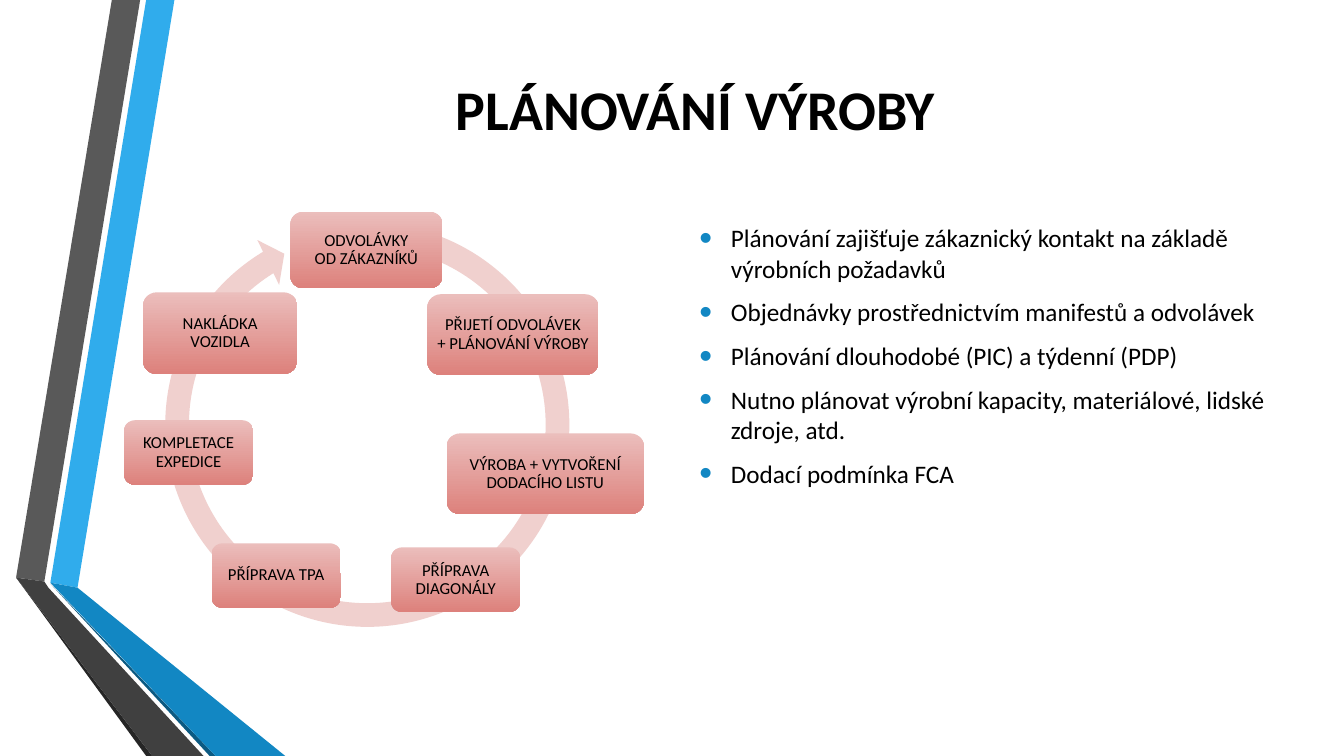
from dataclasses import dataclass

from lxml import etree
from pptx import Presentation
from pptx.dml.color import RGBColor
from pptx.enum.shapes import MSO_SHAPE
from pptx.enum.text import MSO_ANCHOR, MSO_AUTO_SIZE, PP_ALIGN
from pptx.oxml.ns import qn
from pptx.util import Pt

ROUNDED = MSO_SHAPE.ROUNDED_RECTANGLE
CIRCULAR_ARROW = MSO_SHAPE.CIRCULAR_ARROW
MIDDLE = MSO_ANCHOR.MIDDLE
CENTER = PP_ALIGN.CENTER
NO_AUTOFIT = MSO_AUTO_SIZE.NONE
TITLE_ONLY = 5


@dataclass(frozen=True)
class Theme:
    font: str = "Calibri"
    title_size: float = 40
    body_size: float = 18
    step_size: float = 12
    text: str = "000000"
    bullet: str = "1287C3"
    ring: str = "F0D0CE"
    step_top: str = "EBBEBC"
    step_bottom: str = "DD817C"


THEME = Theme()

# Side ribbon: colour and corner points, from back to front
RIBBON = [
    ("30ACEC", [(36, 416.2), (55.4, 419.8), (124.6, 0), (104.4, 0)]),
    ("595959", [(100.1, 0), (79.9, 0), (11.5, 412.6), (31.7, 415.4)]),
    ("262626", [(11.5, 412.6), (104.4, 540), (108.7, 540)]),
    ("0C5A82", [(36, 416.9), (149.8, 540), (154.1, 540)]),
    ("1287C3", [(36, 416.2), (154.1, 540), (203.8, 540), (55.4, 419.8)]),
    ("404040", [(145.4, 540), (34.6, 419.8), (31.7, 415.4), (11.5, 412.6),
                (108.7, 540)]),
]

# Cycle steps: left, top, width, height, lines
SMALL = (92.2, 46.1)
STEPS = [
    (207.4, 151.2, 108.7, 54.7, ["ODVOLÁVKY", "OD ZÁKAZNÍKŮ"]),
    (305.3, 210.2, 122.4, 57.6, ["PŘIJETÍ ODVOLÁVEK", "+ PLÁNOVÁNÍ VÝROBY"]),
    (319, 309.6, 141.1, 57.6, ["VÝROBA + VYTVOŘENÍ DODACÍHO LISTU"]),
    (279.4, 391, *SMALL, ["PŘÍPRAVA DIAGONÁLY"]),
    (151.2, 388.1, *SMALL, ["PŘÍPRAVA TPA"]),
    (88.6, 300.2, *SMALL, ["KOMPLETACE EXPEDICE"]),
    (102.2, 208.8, 110.2, 58.3, ["NAKLÁDKA VOZIDLA"]),
]

POINTS = [
    "Plánování zajišťuje zákaznický kontakt na základě výrobních požadavků",
    "Objednávky prostřednictvím manifestů a odvolávek",
    "Plánování dlouhodobé (PIC) a týdenní (PDP)",
    "Nutno plánovat výrobní kapacity, materiálové, lidské zdroje, atd.",
    "Dodací podmínka FCA",
]


def rgb(colour):
    return RGBColor.from_string(colour)


def add_span(para, text, size, bold=False):
    span = para.add_run()
    span.text = text
    span.font.name = THEME.font
    span.font.size = Pt(size)
    span.font.bold = bold
    span.font.color.rgb = rgb(THEME.text)


def paint(shape, colour):
    shape.fill.solid()
    shape.fill.fore_color.rgb = rgb(colour)
    shape.line.fill.background()
    shape.shadow.inherit = False


def add_band(page, colour, corners):
    corners = [(Pt(x), Pt(y)) for x, y in corners]
    builder = page.shapes.build_freeform(*corners[0])
    builder.add_line_segments(corners[1:], close=True)
    paint(builder.convert_to_shape(), colour)


def set_title(page, text):
    title = page.shapes.title
    title.left, title.top = Pt(102.2), Pt(38.2)
    title.width, title.height = Pt(789.1), Pt(77.8)
    frame = title.text_frame
    frame.auto_size = NO_AUTOFIT
    frame.vertical_anchor = MIDDLE
    para = frame.paragraphs[0]
    para.alignment = CENTER
    add_span(para, text, THEME.title_size, bold=True)


def add_ring(page):
    ring = page.shapes.add_shape(CIRCULAR_ARROW, Pt(108.7), Pt(149.8),
                                 Pt(307.4), Pt(307.4))
    for index, value in enumerate([0.055, 3.307, 143.169, 170.648, 0.058]):
        ring.adjustments[index] = value
    paint(ring, THEME.ring)


def add_step(page, left, top, width, height, lines):
    box = page.shapes.add_shape(ROUNDED, Pt(left), Pt(top), Pt(width), Pt(height))
    box.shadow.inherit = False
    box.line.fill.background()
    box.fill.gradient()
    box.fill.gradient_angle = 270
    for stop, colour in zip(box.fill.gradient_stops,
                            (THEME.step_top, THEME.step_bottom)):
        stop.color.rgb = rgb(colour)

    frame = box.text_frame
    frame.word_wrap = True
    frame.vertical_anchor = MIDDLE
    frame.margin_left = frame.margin_right = Pt(3.6)
    frame.margin_top = frame.margin_bottom = Pt(3.6)
    para = frame.paragraphs[0]
    para.alignment = CENTER
    para.line_spacing = 0.9
    para.space_after = Pt(4.2)
    for index, line in enumerate(lines):
        if index:
            para.add_line_break()
        add_span(para, line, THEME.step_size)


def add_bullet(para):
    props = para._p.get_or_add_pPr()
    props.set("marL", str(Pt(22.5)))
    props.set("indent", str(-Pt(22.5)))
    colour = etree.SubElement(props, qn("a:buClr"))
    etree.SubElement(colour, qn("a:srgbClr"), val=THEME.bullet)
    etree.SubElement(props, qn("a:buSzPct"), val="145000")
    etree.SubElement(props, qn("a:buFont"), typeface="Arial")
    etree.SubElement(props, qn("a:buChar"), char="•")


def add_bullet_list(page, points):
    box = page.shapes.add_textbox(Pt(492.5), Pt(155.5), Pt(427), Pt(301))
    frame = box.text_frame
    frame.word_wrap = True
    for index, point in enumerate(points):
        para = frame.add_paragraph() if index else frame.paragraphs[0]
        para.space_before = Pt(3.6)
        para.space_after = Pt(6)
        add_bullet(para)
        add_span(para, point, THEME.body_size)


def main():
    deck = Presentation()
    deck.slide_width, deck.slide_height = Pt(960), Pt(540)
    page = deck.slides.add_slide(deck.slide_layouts[TITLE_ONLY])

    # Side ribbon
    for colour, corners in RIBBON:
        add_band(page, colour, corners)

    # Title and bullet list
    set_title(page, "PLÁNOVÁNÍ VÝROBY")
    add_bullet_list(page, POINTS)

    # Planning cycle
    add_ring(page)
    for step in STEPS:
        add_step(page, *step)

    deck.save("out.pptx")


if __name__ == "__main__":
    main()
